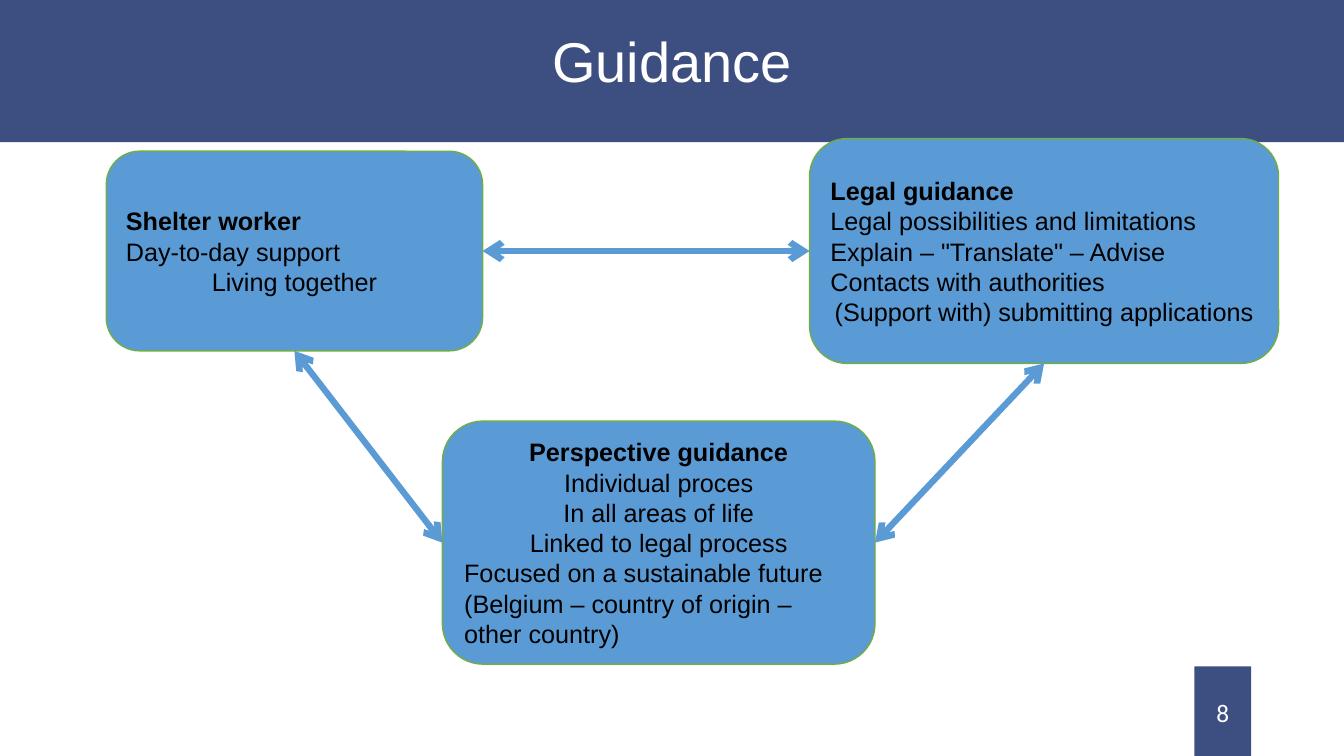
from lxml.etree import SubElement
from pptx import Presentation
from pptx.dml.color import RGBColor
from pptx.enum.shapes import MSO_CONNECTOR, MSO_SHAPE
from pptx.enum.text import MSO_ANCHOR, PP_ALIGN
from pptx.oxml.ns import qn
from pptx.util import Pt

COLORS = {"navy": "3C4F80", "blue": "5B9BD5", "green": "70AD47",
          "black": "000000", "white": "FFFFFF"}
LEFT, CENTER = PP_ALIGN.LEFT, PP_ALIGN.CENTER
RIGHT_SIDE, BOTTOM_SIDE, LEFT_SIDE = 3, 2, 1


def rgb(name):
    return RGBColor.from_string(COLORS[name])


def add_box(s, kind, box, fill, line=None):
    sp = s.shapes.add_shape(kind, *map(Pt, box))
    sp.shadow.inherit = False
    sp.fill.solid()
    sp.fill.fore_color.rgb = rgb(fill)
    if line:
        sp.line.color.rgb = rgb(line)
        sp.line.width = Pt(1)
    else:
        sp.line.fill.background()
    sp.text_frame.word_wrap = True
    sp.text_frame.vertical_anchor = MSO_ANCHOR.MIDDLE
    return sp


def set_text(p, text, size, color, font="Arial", align=CENTER, bold=False):
    p.text = text
    p.alignment = align
    p.font.name, p.font.size, p.font.bold = font, Pt(size), bold
    p.font.color.rgb = rgb(color)


def add_header(s, box, title):
    x, y, w, h = box
    add_box(s, MSO_SHAPE.RECTANGLE, box, "navy")
    tb = s.shapes.add_textbox(Pt(x + 66), Pt(y + 21), Pt(w - 132), Pt(h - 24))
    tf = tb.text_frame
    tf.word_wrap = True
    p = tf.paragraphs[0]
    set_text(p, title, 40, "white")
    p.line_spacing = 0.9


def add_page_number(s, box, number):
    sp = add_box(s, MSO_SHAPE.RECTANGLE, box, "navy")
    set_text(sp.text_frame.paragraphs[0], number, 18, "white", "Calibri")


def add_role(s, box, heading, heading_align, lines):
    """Rounded card with a bold heading over (text, alignment) lines."""
    sp = add_box(s, MSO_SHAPE.ROUNDED_RECTANGLE, box, "blue", "green")
    tf = sp.text_frame
    set_text(tf.paragraphs[0], heading, 18, "black", align=heading_align, bold=True)
    for text, align in lines:
        set_text(tf.add_paragraph(), text, 18, "black", align=align)
    return sp


def link(s, start, start_side, end, end_side):
    """Double-headed arrow between the sides of two cards."""
    c = s.shapes.add_connector(MSO_CONNECTOR.STRAIGHT, 0, 0, 0, 0)
    c.begin_connect(start, start_side)
    c.end_connect(end, end_side)
    c.line.color.rgb = rgb("blue")
    c.line.width = Pt(4.5)
    ln = c.line._get_or_add_ln()
    for tag in ("a:headEnd", "a:tailEnd"):
        SubElement(ln, qn(tag), type="arrow")
    SubElement(c._element.spPr, qn("a:effectLst"))


def main():
    prs = Presentation()
    prs.slide_width, prs.slide_height = Pt(960), Pt(540)
    s = prs.slides.add_slide(prs.slide_layouts[6])

    add_header(s, (0, 0, 960, 101.5), "Guidance")
    add_page_number(s, (853.2, 475.9, 40.5, 65.5), "8")

    shelter = add_role(s, (75.9, 108, 268.8, 142.6), "Shelter worker", LEFT, [
        ("Day-to-day support", LEFT),
        ("Living together", CENTER)])
    legal = add_role(s, (578.3, 99, 335, 160.6), "Legal guidance", LEFT, [
        ("Legal possibilities and limitations", LEFT),
        ("Explain – \"Translate\" – Advise", LEFT),
        ("Contacts with authorities", LEFT),
        ("(Support with) submitting applications", CENTER)])
    perspective = add_role(s, (316, 300.8, 309, 173.6), "Perspective guidance", CENTER, [
        ("Individual proces", CENTER),
        ("In all areas of life", CENTER),
        ("Linked to legal process", CENTER),
        ("Focused on a sustainable future (Belgium – country of origin – "
         "other country)", LEFT)])

    link(s, shelter, RIGHT_SIDE, legal, LEFT_SIDE)
    link(s, legal, BOTTOM_SIDE, perspective, RIGHT_SIDE)
    link(s, shelter, BOTTOM_SIDE, perspective, LEFT_SIDE)
    prs.save("out.pptx")


if __name__ == "__main__":
    main()
